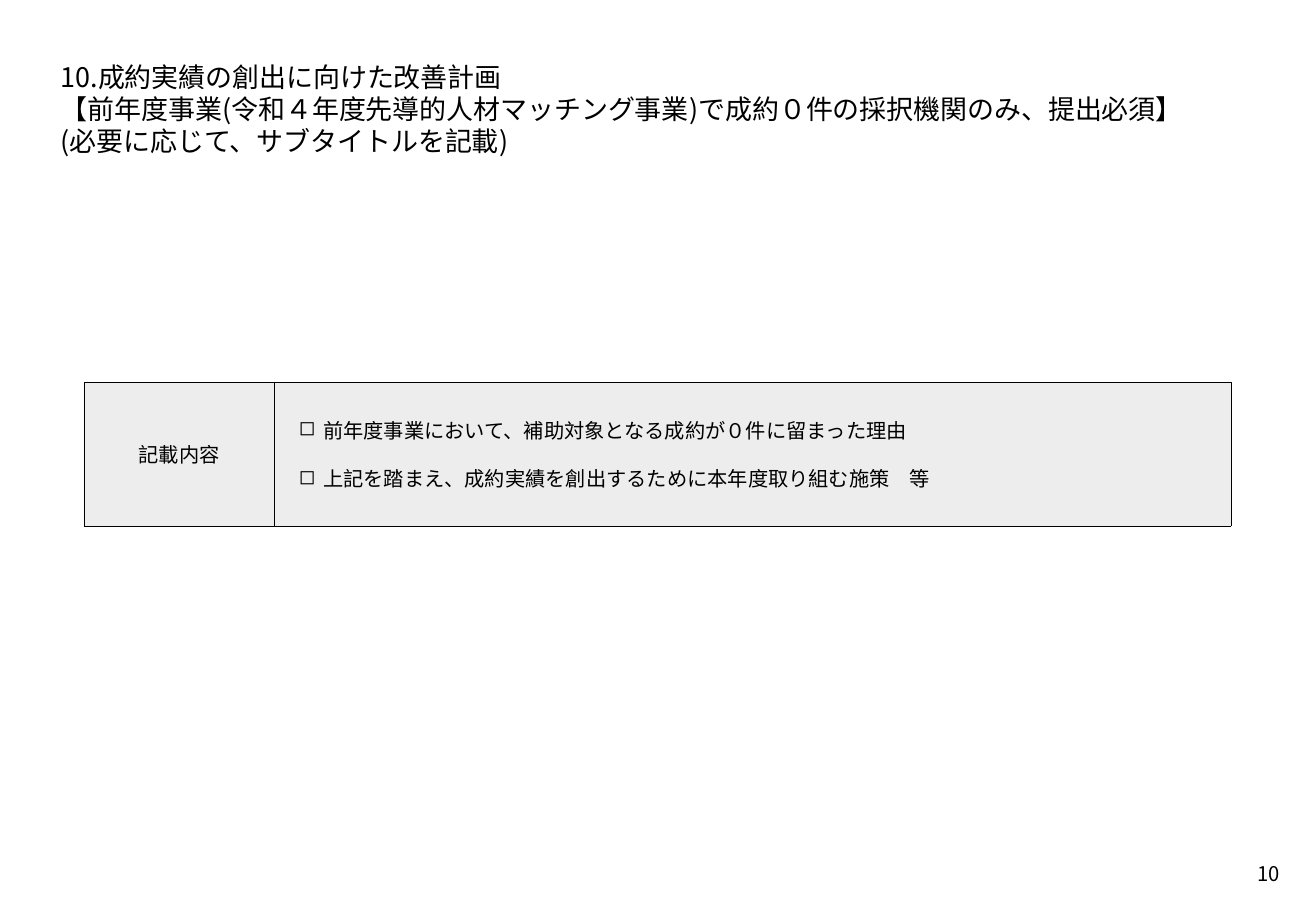
from dataclasses import dataclass

import pptx
import pptx.dml.color
import pptx.enum.dml
import pptx.enum.shapes
import pptx.enum.text
import pptx.oxml.ns
import pptx.slide
import pptx.text.text
import pptx.util
from lxml import etree

Inches = pptx.util.Inches
Pt = pptx.util.Pt
Align = pptx.enum.text.PP_ALIGN
Anchor = pptx.enum.text.MSO_ANCHOR

FONT = "Noto Sans CJK JP"
COLORS = {"text": "000000", "line": "000000", "panel": "EDEDED"}
LINE_HEIGHT = 1.19
BULLET_INDENT = 0.2


@dataclass
class Block:
    left: float
    top: float
    width: float
    height: float
    lines: list[str]
    size: int = 12
    align: Align = Align.LEFT
    anchor: Anchor = Anchor.TOP
    insets: tuple[float, float, float, float] = (0.1, 0.1, 0.1, 0.1)
    wrap: bool = True
    panel: bool = False
    bullet: str = ""


PANEL_TOP, PANEL_HEIGHT = 3.15, 1.18
LABEL_LEFT, LABEL_WIDTH = 0.69, 1.57

BLOCKS = [
    Block(0.3, 0.3, 10.24, 0.79, [
        "10.成約実績の創出に向けた改善計画",
        "【前年度事業(令和４年度先導的人材マッチング事業)で成約０件の採択機関のみ、提出必須】",
        "(必要に応じて、サブタイトルを記載)",
    ], size=16, insets=(0.2, 0.2, 0.08, 0.2)),
    Block(10.24, 6.99, 0.39, 0.39, ["10"], align=Align.RIGHT, wrap=False),
    Block(LABEL_LEFT + LABEL_WIDTH, PANEL_TOP, 7.87, PANEL_HEIGHT, [
        "前年度事業において、補助対象となる成約が０件に留まった理由",
        "上記を踏まえ、成約実績を創出するために本年度取り組む施策　等",
    ], anchor=Anchor.MIDDLE, insets=(0.2, 0.2, 0.2, 0.2), panel=True, bullet="◻"),
    Block(LABEL_LEFT, PANEL_TOP, LABEL_WIDTH, PANEL_HEIGHT, ["記載内容"],
          align=Align.CENTER, anchor=Anchor.MIDDLE, panel=True),
]


def rgb(name: str) -> pptx.dml.color.RGBColor:
    return pptx.dml.color.RGBColor.from_string(COLORS[name])


def add_bullet(para: pptx.text.text._Paragraph, symbol: str) -> None:
    """Give the paragraph a hanging indent and a bullet, ahead of its font settings."""
    properties = para._p.get_or_add_pPr()
    properties.set("marL", str(Inches(BULLET_INDENT)))
    properties.set("indent", str(-Inches(BULLET_INDENT)))
    bullet = etree.Element(pptx.oxml.ns.qn("a:buChar"), char=symbol)
    properties.find(pptx.oxml.ns.qn("a:defRPr")).addprevious(bullet)


def style_paragraph(para: pptx.text.text._Paragraph, block: Block) -> None:
    para.alignment = block.align
    para.line_spacing = Pt(round(block.size * LINE_HEIGHT, 1))
    para.font.size = Pt(block.size)
    para.font.name = FONT
    para.font.color.rgb = rgb("text")
    east_asian = etree.Element(pptx.oxml.ns.qn("a:ea"), typeface=FONT)
    para.font._element.find(pptx.oxml.ns.qn("a:latin")).addnext(east_asian)


def add_block(page: pptx.slide.Slide, block: Block) -> None:
    place = [Inches(n) for n in (block.left, block.top, block.width, block.height)]
    if block.panel:
        box = page.shapes.add_shape(pptx.enum.shapes.MSO_SHAPE.RECTANGLE, *place)
        box.shadow.inherit = False
        box.fill.solid()
        box.fill.fore_color.rgb = rgb("panel")
        box.line.color.rgb = rgb("line")
        box.line.width = Pt(0.25)
        box.line.dash_style = pptx.enum.dml.MSO_LINE.ROUND_DOT
    else:
        box = page.shapes.add_textbox(*place)

    frame = box.text_frame
    frame.word_wrap = block.wrap
    frame.vertical_anchor = block.anchor
    (frame.margin_left, frame.margin_top,
     frame.margin_right, frame.margin_bottom) = map(Inches, block.insets)
    frame.text = "\n".join(block.lines)
    for index, para in enumerate(frame.paragraphs):
        style_paragraph(para, block)
        if block.bullet:
            add_bullet(para, block.bullet)
            if index:
                para.space_before = para.line_spacing


def main() -> None:
    deck = pptx.Presentation()
    deck.slide_width, deck.slide_height = Inches(10.83), Inches(7.5)
    page = deck.slides.add_slide(deck.slide_layouts[6])
    for block in BLOCKS:
        add_block(page, block)
    deck.save("out.pptx")


if __name__ == "__main__":
    main()
